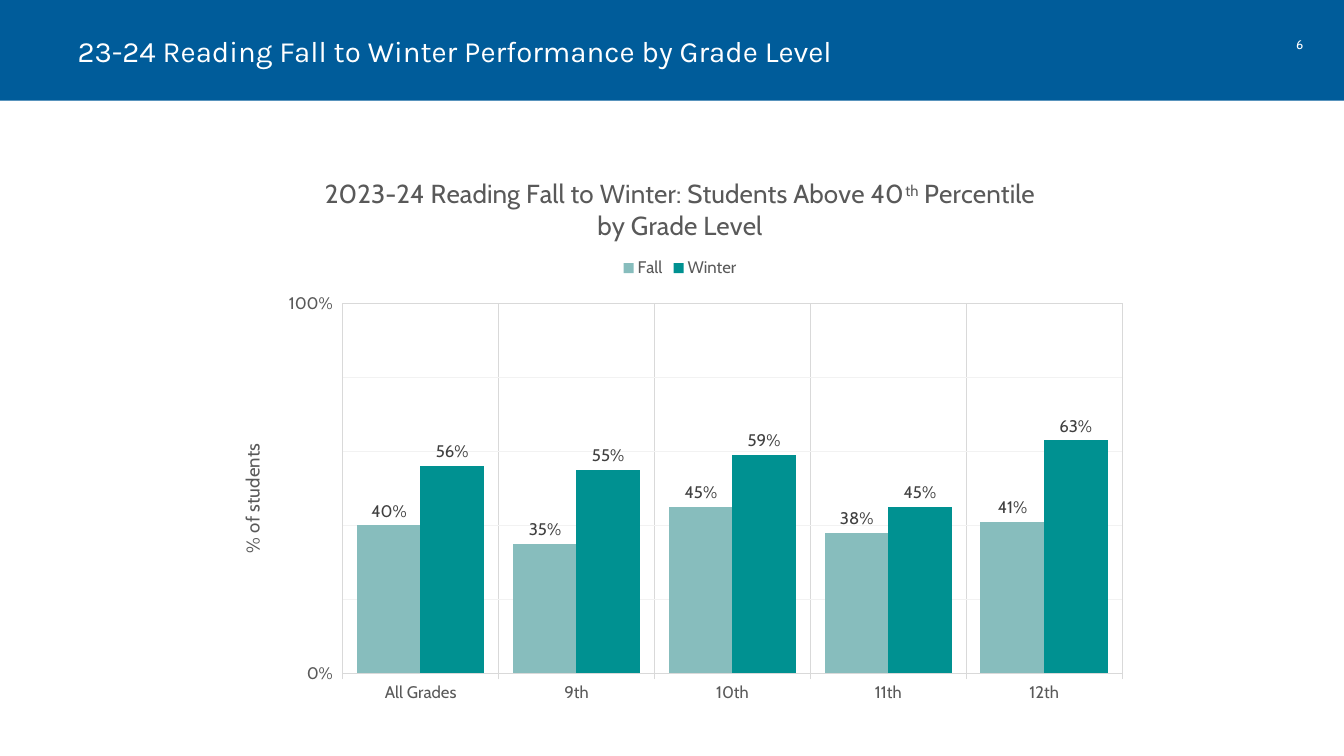
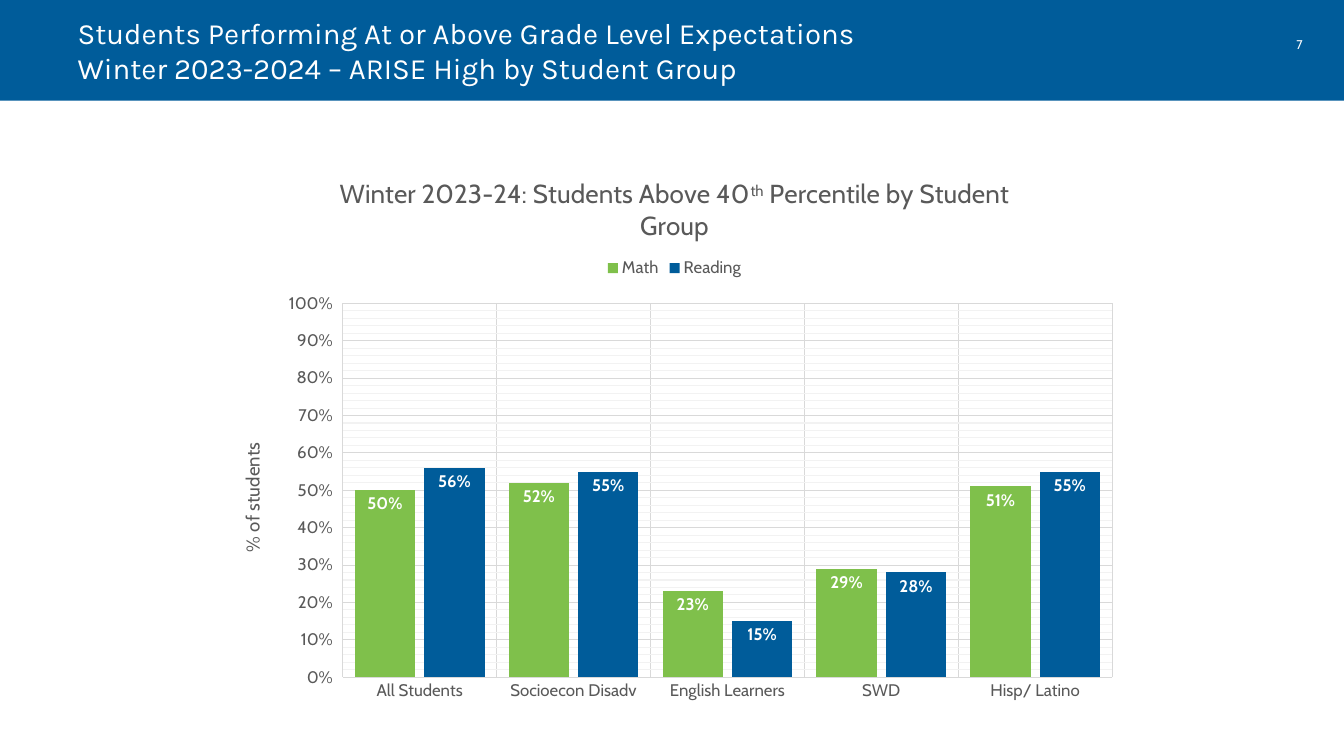
from dataclasses import dataclass

from lxml.etree import SubElement
from pptx import Presentation
from pptx.chart.data import CategoryChartData
from pptx.dml.color import RGBColor
from pptx.enum.chart import XL_CHART_TYPE, XL_LABEL_POSITION, XL_LEGEND_POSITION, XL_TICK_MARK
from pptx.enum.shapes import MSO_SHAPE
from pptx.enum.text import MSO_ANCHOR, MSO_AUTO_SIZE, PP_ALIGN
from pptx.oxml.ns import qn
from pptx.util import Pt


@dataclass(frozen=True)
class Theme:
    """Colours, fonts and type sizes shared by the slides."""
    blue: str = "005C9A"
    white: str = "FFFFFF"
    text: str = "595959"
    dark: str = "404040"
    grid: str = "D9D9D9"
    minor: str = "F2F2F2"
    pale_teal: str = "87BDBD"
    teal: str = "009191"
    green: str = "7FC04B"
    head_font: str = "Karla"
    body_font: str = "Cabin"
    head: float = 21
    chart_title: float = 18.6
    axis_title: float = 13.3
    label: float = 12
    number: float = 9


T = Theme()
PX = 9144
SIZE = (1333, 750)
BAND = (0, 0, 1333, 100)
TITLE = (67, 0, 1188, 100)
NUMBER = (1259, 32, 60, 25)

SLIDES = [
    {
        "number": "6",
        "title": "23-24 Reading Fall to Winter Performance by Grade Level",
        "chart_title": "2023-24 Reading Fall to Winter: Students Above 40^th^ Percentile\nby Grade Level",
        "frame": (217, 156, 915, 553),
        "plot": (340, 301, 773, 367),
        "cats": ["All Grades", "9th", "10th", "11th", "12th"],
        "series": [
            ("Fall", T.pale_teal, (0.40, 0.35, 0.45, 0.38, 0.41)),
            ("Winter", T.teal, (0.56, 0.55, 0.59, 0.45, 0.63)),
        ],
        "gap": 44, "overlap": 2, "major": 1, "minor": 0.2,
        "tick": XL_TICK_MARK.OUTSIDE,
        "labels": (XL_LABEL_POSITION.OUTSIDE_END, T.dark, False),
    },
    {
        "number": "7",
        "title": "Students Performing At or Above Grade Level Expectations\n"
                 "Winter 2023-2024 – ARISE High by Student Group",
        "chart_title": "Winter 2023-24: Students Above 40^th^ Percentile by Student Group",
        "frame": (217, 156, 904, 551),
        "plot": (340, 301, 763, 371),
        "cats": ["All Students", "Socioecon Disadv", "English Learners", "SWD", "Hisp/ Latino"],
        "series": [
            ("Math", T.green, (0.50, 0.52, 0.23, 0.29, 0.51)),
            ("Reading", T.blue, (0.56, 0.55, 0.15, 0.28, 0.55)),
        ],
        "gap": 40, "overlap": -15, "major": 0.1, "minor": 0.02,
        "tick": XL_TICK_MARK.NONE,
        "labels": (XL_LABEL_POSITION.INSIDE_END, T.white, True),
    },
]


def emu(box):
    """Turn px lengths into EMU."""
    return [v * PX for v in box]


def style(font, size=T.label, color=T.text, name=T.body_font, bold=False):
    """Set the format of a font."""
    font.size, font.name, font.bold = Pt(size), name, bold
    font.color.rgb = RGBColor.from_string(color)


def write(tf, text, align=PP_ALIGN.CENTER, **fmt):
    """Write one paragraph per line, with ^marked^ parts raised."""
    for i, line in enumerate(text.split("\n")):
        p = tf.add_paragraph() if i else tf.paragraphs[0]
        p.alignment = align
        for j, part in enumerate(line.split("^")):
            r = p.add_run()
            r.text = part
            style(r.font, **fmt)
            if j % 2:
                r._r.get_or_add_rPr().set("baseline", "30000")


def rule(line, color):
    """Draw a chart line in a colour."""
    line.color.rgb = RGBColor.from_string(color)
    line.width = Pt(0.75)


def rule_minor(axis_element):
    """Colour the minor gridlines of an axis."""
    lines = axis_element.find(qn("c:minorGridlines"))
    ln = SubElement(SubElement(lines, qn("c:spPr")), qn("a:ln"), w=str(Pt(0.75)))
    SubElement(SubElement(ln, qn("a:solidFill")), qn("a:srgbClr"), val=T.minor)


def place_plot(chart, frame, plot):
    """Fix the inner plot area within the chart frame."""
    area = chart.element.find(".//" + qn("c:plotArea"))
    for old in area.findall(qn("c:layout")):
        area.remove(old)
    layout = SubElement(area, qn("c:layout"))
    area.insert(0, layout)
    manual = SubElement(layout, qn("c:manualLayout"))
    x, y, w, h = frame
    left, top, width, height = plot
    values = [("layoutTarget", "inner"), ("xMode", "edge"), ("yMode", "edge"),
              ("x", (left - x) / w), ("y", (top - y) / h),
              ("w", width / w), ("h", height / h)]
    for tag, value in values:
        SubElement(manual, qn("c:" + tag)).set("val", str(value))


def style_axes(chart, d):
    """Format both axes and their gridlines."""
    cat, val = chart.category_axis, chart.value_axis
    for ax in (cat, val):
        style(ax.tick_labels.font)
        ax.has_major_gridlines = True
        rule(ax.major_gridlines.format.line, T.grid)
    cat.major_tick_mark = d["tick"]
    rule(cat.format.line, T.grid)
    val.major_tick_mark = XL_TICK_MARK.OUTSIDE
    val.format.line.fill.background()
    val.minimum_scale, val.maximum_scale = 0, 1
    val.major_unit, val.minor_unit = d["major"], d["minor"]
    val.has_minor_gridlines = True
    val.tick_labels.number_format = "0%"
    val.tick_labels.number_format_is_linked = False
    write(val.axis_title.text_frame, "% of students", size=T.axis_title)
    title = val.axis_title.element
    body = title.find(".//" + qn("a:bodyPr"))
    body.set("rot", "-5400000")
    body.set("vert", "horz")
    rule_minor(title.getparent())


def add_columns(s, d):
    """Add the clustered column chart."""
    data = CategoryChartData(number_format="0%")
    data.categories = d["cats"]
    for name, _, values in d["series"]:
        data.add_series(name, values)
    chart = s.shapes.add_chart(XL_CHART_TYPE.COLUMN_CLUSTERED, *emu(d["frame"]), data).chart
    style(chart.font)
    write(chart.chart_title.text_frame, d["chart_title"], size=T.chart_title)
    chart.has_legend = True
    chart.legend.position = XL_LEGEND_POSITION.TOP
    chart.legend.include_in_layout = False
    style(chart.legend.font)
    style_axes(chart, d)
    place_plot(chart, d["frame"], d["plot"])
    plot = chart.plots[0]
    plot.vary_by_categories = False
    plot.gap_width, plot.overlap = d["gap"], d["overlap"]
    position, color, bold = d["labels"]
    for series, (_, fill, _) in zip(plot.series, d["series"]):
        series.format.fill.solid()
        series.format.fill.fore_color.rgb = RGBColor.from_string(fill)
        labels = series.data_labels
        labels.show_value = True
        labels.position = position
        labels.number_format, labels.number_format_is_linked = "0%", False
        style(labels.font, color=color, bold=bold)


def add_band(s, layout):
    """Put the title band on the layout, behind its placeholders."""
    band = s.shapes.add_shape(MSO_SHAPE.RECTANGLE, *emu(BAND))
    band.shadow.inherit = False
    band.fill.solid()
    band.fill.fore_color.rgb = RGBColor.from_string(T.blue)
    band.line.fill.background()
    band.element.nvSpPr.cNvPr.set("id", "20")
    layout.shapes.element.insert(2, band.element)


def add_heading(s, d):
    """Fill the title placeholder and the slide number."""
    title = s.shapes.title
    title.left, title.top, title.width, title.height = emu(TITLE)
    tf = title.text_frame
    tf.auto_size, tf.vertical_anchor = MSO_AUTO_SIZE.NONE, MSO_ANCHOR.MIDDLE
    write(tf, d["title"], align=PP_ALIGN.LEFT, size=T.head, color=T.white, name=T.head_font)
    tf = s.shapes.add_textbox(*emu(NUMBER)).text_frame
    tf.word_wrap = True
    write(tf, d["number"], size=T.number, color=T.white)


def main():
    """Build and save the slides."""
    prs = Presentation()
    prs.slide_width, prs.slide_height = emu(SIZE)
    layout = prs.slide_layouts[5]
    for i, d in enumerate(SLIDES):
        s = prs.slides.add_slide(layout)
        if i == 0:
            add_band(s, layout)
        add_heading(s, d)
        add_columns(s, d)
    prs.save("out.pptx")


if __name__ == "__main__":
    main()
